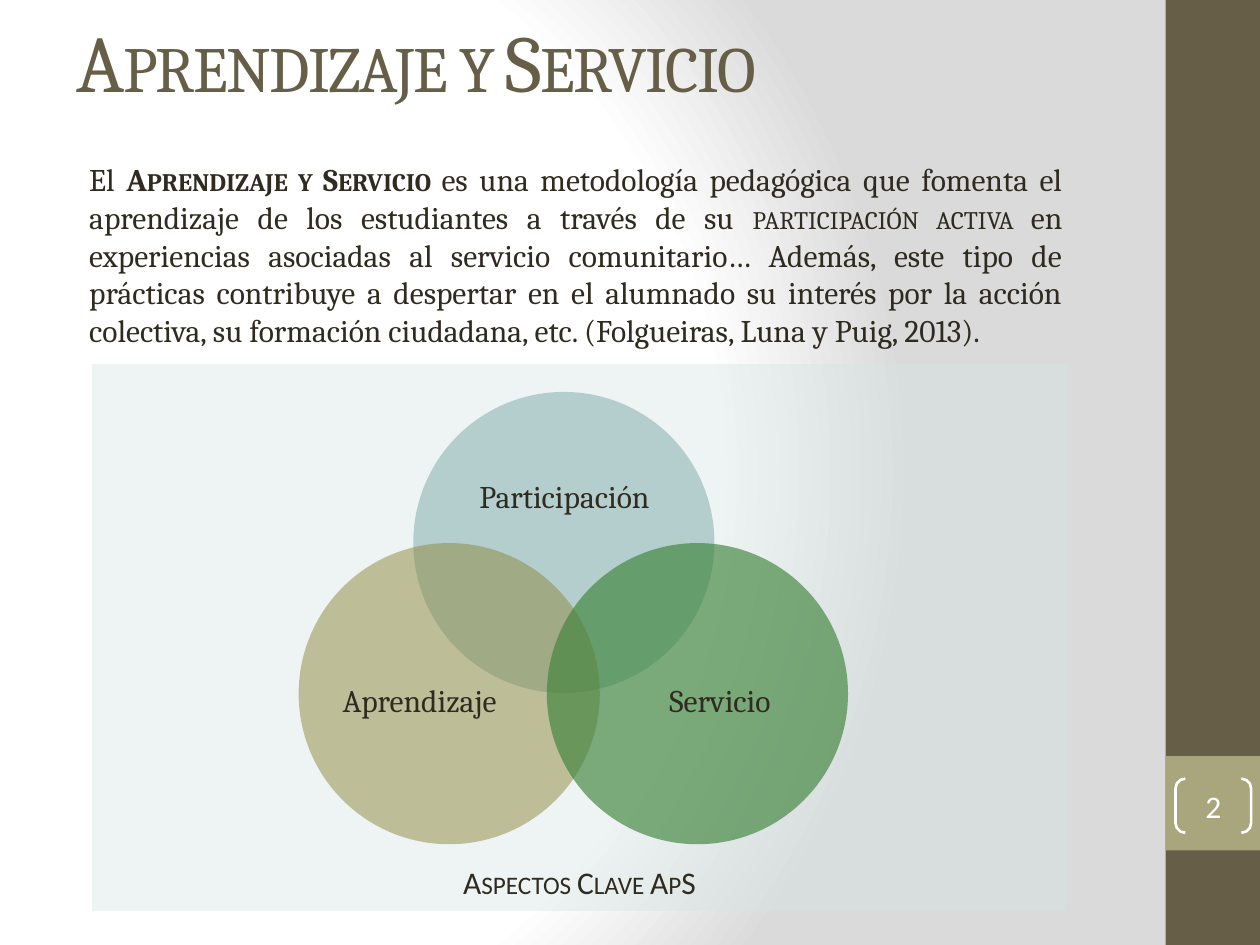
"""Build the slide on the key aspects of learning and service."""
from lxml import etree
from pptx import Presentation, util as u
from pptx.dml.color import RGBColor
from pptx.enum import shapes, text
from pptx.oxml import ns

WHITE = RGBColor(0xFF, 0xFF, 0xFF)
GREY = RGBColor(0xDA, 0xDA, 0xDA)
BROWN = RGBColor(0x67, 0x5E, 0x47)
KHAKI = RGBColor(0xA9, 0xA5, 0x7C)
INK = RGBColor(0x2F, 0x2B, 0x20)
MIST = RGBColor(0xD7, 0xE5, 0xE5)
TEAL = RGBColor(0x9C, 0xBE, 0xBD)
OLIVE = RGBColor(0x8D, 0x87, 0x3E)
GREEN = RGBColor(0x3F, 0x84, 0x3C)
KIND, ANCHOR, ALIGN = shapes.MSO_SHAPE, text.MSO_ANCHOR, text.PP_ALIGN

deck = Presentation()
deck.slide_width, deck.slide_height = u.Inches(10), u.Inches(7.5)
COLUMN, ROW = deck.slide_width / 100, deck.slide_height / 100
page = deck.slides.add_slide(deck.slide_layouts[6])


def add_box(kind, left, top, width, height, color=None, alpha=100):
    place = [round(n) for n in (left * COLUMN, top * ROW, width * COLUMN, height * ROW)]
    if kind is None:
        return page.shapes.add_textbox(*place)
    box = page.shapes.add_shape(kind, *place)
    box.shadow.inherit = False
    box.line.fill.background()
    if color is None:
        box.fill.background()
        return box
    box.fill.solid()
    box.fill.fore_color.rgb = color
    if alpha < 100:
        tint = box.fill._xPr.find(".//" + ns.qn("a:srgbClr"))
        etree.SubElement(tint, ns.qn("a:alpha"), val=str(alpha * 1000))
    return box


def write(box, spans, frame={}, align=ALIGN.LEFT, color=INK, **base):
    for name, value in {"word_wrap": True, "vertical_anchor": ANCHOR.TOP, **frame}.items():
        setattr(box.text_frame, name, value)
    para = box.text_frame.paragraphs[0]
    para.alignment = align
    for words, extra in spans:
        span = para.add_run()
        span.text = words
        style = {"size": u.Pt(18), "name": "Cambria", **base, **extra}
        marks = {key: style.pop(key) for key in ("cap", "spc") if key in style}
        for name, value in style.items():
            setattr(span.font, name, value)
        span.font.color.rgb = color
        for name, value in marks.items():
            span.font._element.set(name, value)


page.background.fill.gradient()
gradient = page.element.find(".//" + ns.qn("a:gradFill"))
for child in list(gradient):
    gradient.remove(child)
stops = etree.SubElement(gradient, ns.qn("a:gsLst"))
for position, color in ((0, WHITE), (75, WHITE), (100, GREY)):
    stop = etree.SubElement(stops, ns.qn("a:gs"), pos=str(position * 1000))
    etree.SubElement(stop, ns.qn("a:srgbClr"), val=str(color))
route = etree.SubElement(gradient, ns.qn("a:path"), {"path": "circle"})
etree.SubElement(route, ns.qn("a:fillToRect"), l="20000", t="50000", r="100000", b="50000")

add_box(KIND.RECTANGLE, 92.5, 0, 7.5, 100, BROWN)
add_box(KIND.RECTANGLE, 92.5, 80, 7.5, 10, KHAKI)
number = add_box(KIND.DOUBLE_BRACKET, 93.3, 82.4, 6, 5.73)
number.adjustments[0] = 0.18
number.line.color.rgb = WHITE
number.line.width = u.Pt(1.5)
margins = dict.fromkeys(("margin_left", "margin_top", "margin_right", "margin_bottom"), 0)
write(number, [("2", {})], {"vertical_anchor": ANCHOR.MIDDLE, **margins},
      ALIGN.CENTER, WHITE, name="Calibri")

title = add_box(None, 5.1, 3.2, 88.2, 8.93)
write(title, [("Aprendizaje y Servicio", {"cap": "small", "spc": "-100"})],
      {"vertical_anchor": ANCHOR.BOTTOM}, color=BROWN, size=u.Pt(46))

body = add_box(None, 6.1, 16.27, 79.2, 21.6)
write(body, [
    ("El ", {}),
    ("Aprendizaje y Servicio ", {"bold": True, "cap": "small"}),
    ("es una metodología pedagógica que fomenta el aprendizaje de los estudiantes "
     "a través de su ", {}),
    ("participación activa ", {"cap": "small"}),
    ("en experiencias asociadas al servicio comunitario… Además, este tipo de prácticas "
     "contribuye a despertar en el alumnado su interés por la acción colectiva, su "
     "formación ciudadana, etc. (Folgueiras, Luna y Puig, 2013).", {}),
], align=ALIGN.JUSTIFY)

DIAMETER = (23.9, 31.87)
add_box(KIND.OVAL, 32.8, 41.47, *DIAMETER, TEAL)
panel = add_box(KIND.RECTANGLE, 7.3, 38.53, 77.4, 57.87, MIST, 42)
write(panel, [("Aspectos Clave ApS", {"cap": "small"})],
      {"vertical_anchor": ANCHOR.BOTTOM, "margin_bottom": u.Inches(0.08)},
      ALIGN.CENTER, name="Calibri")
for left, color, alpha in ((23.7, OLIVE, 50), (43.4, GREEN, 66)):
    add_box(KIND.OVAL, left, 57.47, *DIAMETER, color, alpha)

for words, align, place in (
    ("Participación", ALIGN.CENTER, (35.7, 49.87, 18.2, 9.47)),
    ("Aprendizaje", ALIGN.LEFT, (26.2, 71.4, 18.2, 9.47)),
    ("Servicio", ALIGN.CENTER, (49.3, 71.4, 15.7, 5.33)),
):
    write(add_box(None, *place), [(words, {})], align=align)

deck.save("out.pptx")
